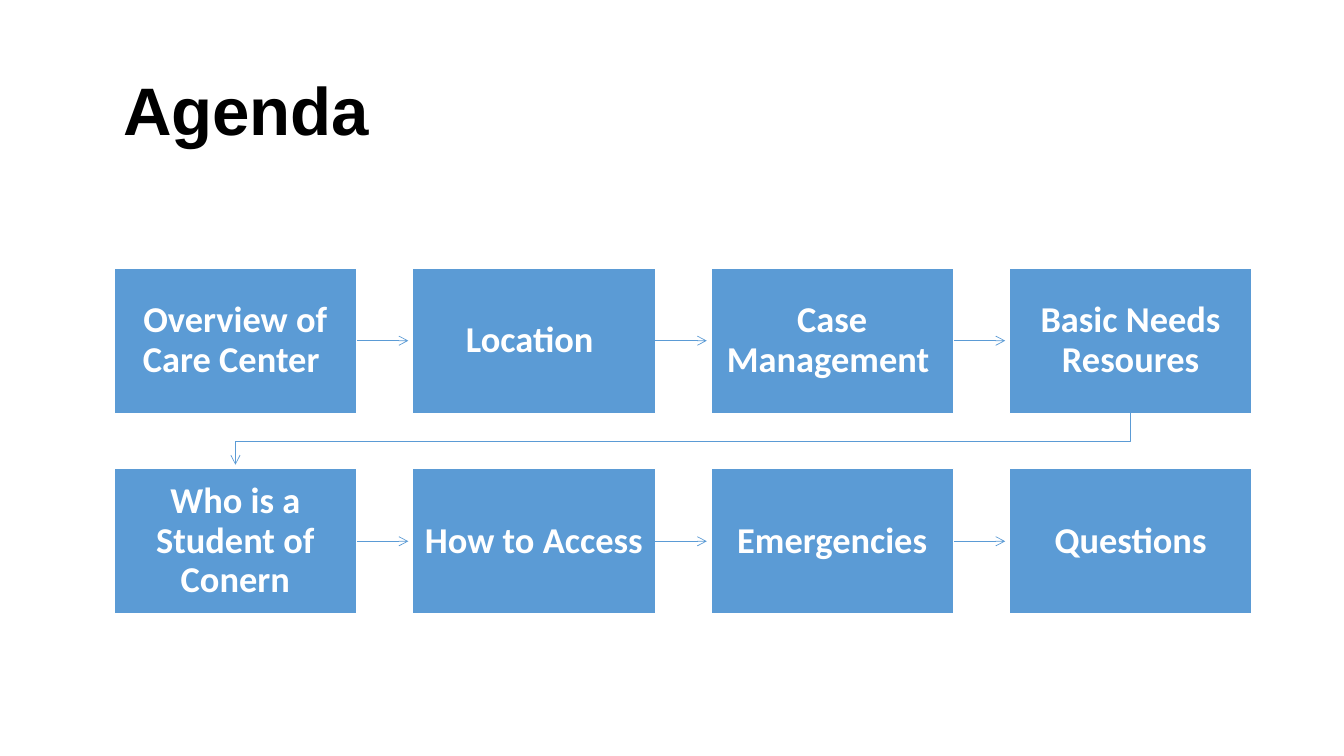
import pptx
import pptx.util
import pptx.dml.color
import pptx.enum.shapes
import pptx.enum.text
import pptx.oxml.ns
import lxml.etree

Inches = pptx.util.Inches
COLORS = {"box": "5B9BD5", "white": "FFFFFF", "title": "000000"}
TOPICS = [
    ["Overview of Care Center ", "Location ", "Case Management ", "Basic Needs Resoures"],
    ["Who is a Student of Conern", "How to Access ", "Emergencies", "Questions"],
]
LEFT, TOP = 1.13, 2.66
WIDTH, HEIGHT = 2.41, 1.44
COLUMN_STEP, ROW_STEP = 2.96, 1.99
ARROW_GAP = 0.04


def color(name):
    return pptx.dml.color.RGBColor.from_string(COLORS[name])


def write_text(frame, text, *, size, font, fill, align, inset):
    frame.word_wrap = True
    frame.auto_size = pptx.enum.text.MSO_AUTO_SIZE.NONE
    frame.vertical_anchor = pptx.enum.text.MSO_ANCHOR.MIDDLE
    frame.margin_left = frame.margin_right = Inches(inset)
    frame.margin_top = frame.margin_bottom = Inches(inset)
    para = frame.paragraphs[0]
    para.alignment = align
    para.line_spacing = 0.9
    span = para.add_run()
    span.text = text
    span.font.size = pptx.util.Pt(size)
    span.font.name = font
    span.font.bold = True
    span.font.color.rgb = color(fill)


def add_title(page, text):
    title = page.shapes.title
    title.left, title.top = Inches(1.12), Inches(0.4)
    title.width, title.height = Inches(11.29), Inches(1.45)
    write_text(title.text_frame, text, size=48, font="Arial", fill="title",
               align=pptx.enum.text.PP_ALIGN.LEFT, inset=0.1)


def add_topic(page, text, left, top):
    box = page.shapes.add_shape(pptx.enum.shapes.MSO_SHAPE.RECTANGLE, Inches(left),
                                Inches(top), Inches(WIDTH), Inches(HEIGHT))
    box.shadow.inherit = False
    box.fill.solid()
    box.fill.fore_color.rgb = color("box")
    box.line.color.rgb = color("white")
    box.line.width = pptx.util.Pt(1)
    write_text(box.text_frame, text, size=26, font="Calibri", fill="white",
               align=pptx.enum.text.PP_ALIGN.CENTER, inset=0.12)
    return box


def style_arrow(arrow):
    arrow.line.color.rgb = color("box")
    arrow.line.width = pptx.util.Pt(0.5)
    line = arrow.line._get_or_add_ln()
    lxml.etree.SubElement(line, pptx.oxml.ns.qn("a:tailEnd"), type="arrow")


def add_arrow(page, box):
    middle = box.top + box.height // 2
    start = box.left + box.width
    end = box.left + Inches(COLUMN_STEP - ARROW_GAP)
    arrow = page.shapes.add_connector(pptx.enum.shapes.MSO_CONNECTOR.STRAIGHT,
                                      start, middle, end, middle)
    arrow.begin_connect(box, 3)
    style_arrow(arrow)
    lxml.etree.SubElement(arrow._element.spPr, pptx.oxml.ns.qn("a:effectLst"))


def add_row_turn(page, last, first):
    start_x = last.left + last.width // 2
    end_x = first.left + first.width // 2
    turn_y = (last.top + last.height + first.top) // 2
    builder = page.shapes.build_freeform(start_x, last.top + last.height)
    builder.add_line_segments([(start_x, turn_y), (end_x, turn_y),
                               (end_x, first.top - Inches(ARROW_GAP))], close=False)
    arrow = builder.convert_to_shape()
    arrow.shadow.inherit = False
    arrow.fill.background()
    style_arrow(arrow)


def main():
    deck = pptx.Presentation()
    deck.slide_width, deck.slide_height = Inches(13.33), Inches(7.5)
    page = deck.slides.add_slide(deck.slide_layouts[5])
    add_title(page, "Agenda")
    rows = [[add_topic(page, text, LEFT + column * COLUMN_STEP, TOP + row * ROW_STEP)
             for column, text in enumerate(topics)]
            for row, topics in enumerate(TOPICS)]
    for boxes in rows:
        for box in boxes[:-1]:
            add_arrow(page, box)
    add_row_turn(page, rows[0][-1], rows[1][0])
    deck.save("out.pptx")


if __name__ == "__main__":
    main()
